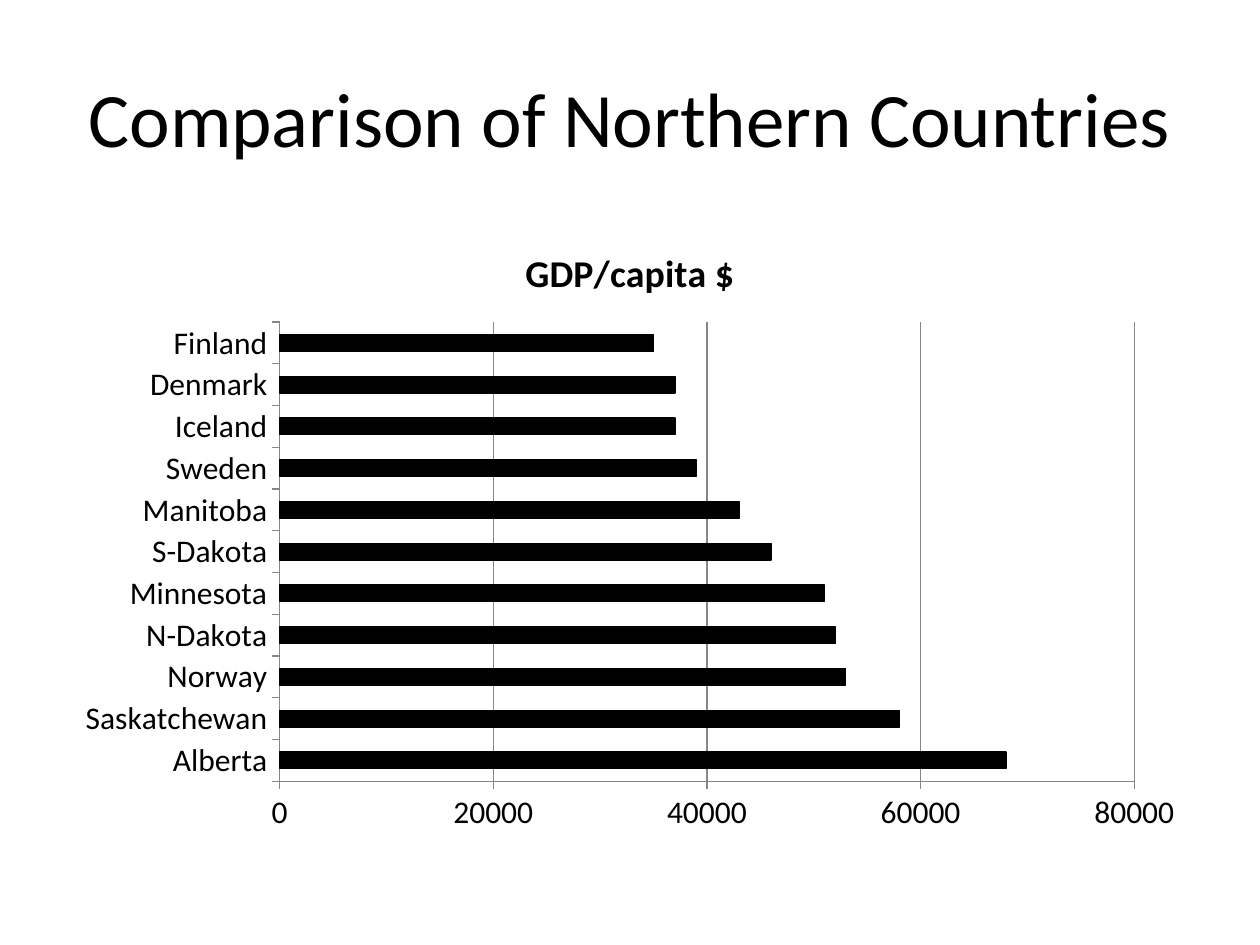
from pptx import Presentation
from pptx import util as u
from pptx.chart.data import CategoryChartData
from pptx.dml.color import RGBColor
from pptx.enum import chart as charts, text

FONT = "Calibri"
COLORS = {"ink": "000000", "axis": "868686"}
GDP_PER_CAPITA = {
    "Alberta": 68000,
    "Saskatchewan": 58000,
    "Norway": 53000,
    "N-Dakota": 52000,
    "Minnesota": 51000,
    "S-Dakota": 46000,
    "Manitoba": 43000,
    "Sweden": 39000,
    "Iceland": 37000,
    "Denmark": 37000,
    "Finland": 35000,
}


def color(name):
    return RGBColor.from_string(COLORS[name])


def style_font(font, size, bold=False):
    font.name = FONT
    font.size = u.Pt(size)
    font.bold = bold
    font.color.rgb = color("ink")


def style_line(line, name):
    line.color.rgb = color(name)
    line.width = u.Pt(0.75)


def add_title(page, words):
    box = page.shapes.add_textbox(
        u.Inches(0.5), u.Inches(0.3), u.Inches(9), u.Inches(1.25))
    frame = box.text_frame
    frame.word_wrap = True
    frame.vertical_anchor = text.MSO_ANCHOR.MIDDLE
    frame.text = words
    para = frame.paragraphs[0]
    para.alignment = text.PP_ALIGN.CENTER
    style_font(para.runs[0].font, 44)


def add_bar_chart(page, heading, values):
    data = CategoryChartData()
    data.categories = list(values)
    data.add_series(heading, list(values.values()))
    chart = page.shapes.add_chart(
        charts.XL_CHART_TYPE.BAR_CLUSTERED,
        u.Inches(0.5), u.Inches(1.75), u.Inches(9), u.Inches(4.95), data).chart
    style_font(chart.font, 18)
    chart.has_legend = False

    # Heading
    chart.has_title = True
    frame = chart.chart_title.text_frame
    frame.text = heading
    style_font(frame.paragraphs[0].runs[0].font, 21.6, bold=True)
    chart.chart_title.include_in_layout = False

    # Bars
    plot = chart.plots[0]
    plot.gap_width = 150
    plot.vary_by_categories = False
    bars = plot.series[0].format
    bars.fill.solid()
    bars.fill.fore_color.rgb = color("ink")
    style_line(bars.line, "ink")

    # Axes and gridlines
    for axis in (chart.category_axis, chart.value_axis):
        axis.major_tick_mark = charts.XL_TICK_MARK.OUTSIDE
        axis.minor_tick_mark = charts.XL_TICK_MARK.NONE
        style_line(axis.format.line, "axis")
    scale = chart.value_axis
    scale.minimum_scale = 0
    scale.maximum_scale = 80000
    scale.major_unit = 20000
    scale.has_major_gridlines = True
    style_line(scale.major_gridlines.format.line, "axis")


def main():
    deck = Presentation()
    deck.slide_width = u.Inches(10)
    deck.slide_height = u.Inches(7.5)
    page = deck.slides.add_slide(deck.slide_layouts[6])
    add_title(page, "Comparison of Northern Countries")
    add_bar_chart(page, "GDP/capita $", GDP_PER_CAPITA)
    deck.save("out.pptx")


if __name__ == "__main__":
    main()
